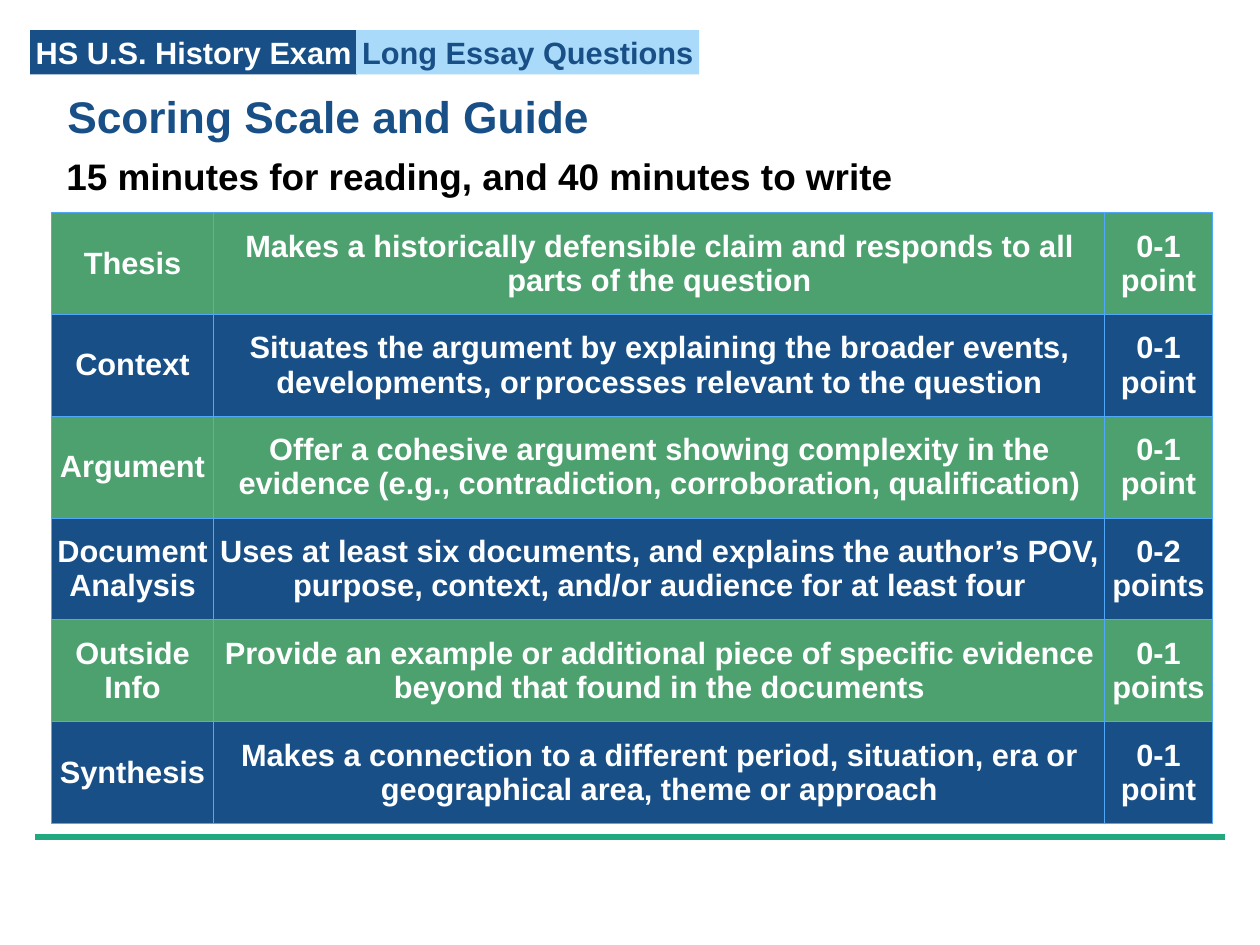
from dataclasses import dataclass

from lxml import etree
from pptx import Presentation
from pptx.dml.color import RGBColor
from pptx.enum.shapes import MSO_CONNECTOR, MSO_SHAPE
from pptx.enum.text import MSO_ANCHOR, PP_ALIGN
from pptx.oxml.ns import qn
from pptx.util import Inches, Pt

LEFT, CENTER = PP_ALIGN.LEFT, PP_ALIGN.CENTER
TOP, MIDDLE = MSO_ANCHOR.TOP, MSO_ANCHOR.MIDDLE
RECT, STRAIGHT = MSO_SHAPE.RECTANGLE, MSO_CONNECTOR.STRAIGHT


@dataclass(frozen=True)
class Theme:
    font: str = "Arial"
    navy: str = "174F86"
    sky: str = "AADAF9"
    green: str = "4CA16E"
    teal: str = "21A87E"
    edge: str = "51A8F9"
    white: str = "FFFFFF"
    black: str = "000000"
    title: int = 36
    lead: int = 30
    body: int = 25
    small: int = 12
    pad: float = 0.06


THEME = Theme()

# Text, left, width, fill, text colour
TAGS = [
    ("HS U.S. History Exam", 0.34, 3.69, THEME.navy, THEME.white),
    ("Long Essay Questions", 4.02, 3.87, THEME.sky, THEME.navy),
]
TITLE = "Scoring Scale and Guide"
LEAD = "15 minutes for reading, and 40 minutes to write"

# Criterion, runs of the rule with their sizes, score
GUIDE = [
    ("Thesis",
     [("Makes a historically defensible claim and responds to all parts of the question", THEME.body)],
     "0-1 point"),
    ("Context",
     [("Situates the argument by explaining the broader events, developments, or", THEME.body),
      (" ", THEME.small),
      ("processes relevant to the question", THEME.body)],
     "0-1 point"),
    ("Argument",
     [("Offer a cohesive argument showing complexity in the evidence "
       "(e.g., contradiction, corroboration, qualification)", THEME.body)],
     "0-1 point"),
    ("Document Analysis",
     [("Uses at least six documents, and explains the author’s POV, purpose, context, "
       "and/or audience for at least four", THEME.body)],
     "0-2 points"),
    ("Outside Info",
     [("Provide an example or additional piece of specific evidence beyond that found "
       "in the documents", THEME.body)],
     "0-1 points"),
    ("Synthesis",
     [("Makes a connection to a different period, situation, era or geographical area, "
       "theme or approach", THEME.body)],
     "0-1 point"),
]
COLS = [1.83, 10.06, 1.21]
ROW = 1.15


def paint(fill, color):
    fill.solid()
    fill.fore_color.rgb = RGBColor.from_string(color)


def pad(box):
    """Set equal margins on a text frame or a table cell."""
    box.margin_left = box.margin_right = Inches(THEME.pad)
    box.margin_top = box.margin_bottom = Inches(THEME.pad)


def write(frame, runs, color, align):
    para = frame.paragraphs[0]
    para.alignment = align
    for text, size in runs:
        run = para.add_run()
        run.text = text
        font = run.font
        font.name, font.size, font.bold = THEME.font, Pt(size), True
        font.color.rgb = RGBColor.from_string(color)
    return para


def label(shape, text, size, color, align=LEFT, anchor=MIDDLE, wrap=False):
    """Put one line of text in a shape or text box."""
    frame = shape.text_frame
    pad(frame)
    frame.word_wrap = wrap
    frame.vertical_anchor = anchor
    return write(frame, [(text, size)], color, align)


def frame_cell(cell):
    """Draw a thin border on all four sides of a cell."""
    props = cell._tc.get_or_add_tcPr()
    for spot, side in enumerate(("a:lnL", "a:lnR", "a:lnT", "a:lnB")):
        line = etree.Element(qn(side), w=str(Pt(1)))
        solid = etree.SubElement(line, qn("a:solidFill"))
        etree.SubElement(solid, qn("a:srgbClr"), val=THEME.edge)
        props.insert(spot, line)


def add_tags(slide):
    for text, left, width, fill, color in TAGS:
        tag = slide.shapes.add_shape(
            RECT, Inches(left), Inches(0.34), Inches(width), Inches(0.5))
        tag.shadow.inherit = False
        tag.line.fill.background()
        paint(tag.fill, fill)
        label(tag, text, THEME.body, color, CENTER)


def add_rule(slide):
    rule = slide.shapes.add_connector(
        STRAIGHT, Inches(0.4), Inches(9.45), Inches(13.83), Inches(9.45))
    rule.line.width = Pt(5)
    rule.line.color.rgb = RGBColor.from_string(THEME.teal)
    etree.SubElement(rule._element.spPr, qn("a:effectLst"))


def add_heads(slide):
    title = slide.shapes.add_textbox(Inches(0.7), Inches(0.97), Inches(6.02), Inches(0.68))
    label(title, TITLE, THEME.title, THEME.navy)
    lead = slide.shapes.add_textbox(Inches(0.69), Inches(1.67), Inches(12.84), Inches(0.57))
    para = label(lead, LEAD, THEME.lead, THEME.black, anchor=TOP, wrap=True)
    para.space_before = Pt(10)


def add_guide(slide):
    table = slide.shapes.add_table(
        len(GUIDE), len(COLS), Inches(0.58), Inches(2.4),
        Inches(sum(COLS)), Inches(ROW * len(GUIDE))).table
    table.first_row = table.horz_banding = False
    for col, width in zip(table.columns, COLS):
        col.width = Inches(width)
    for r, (name, rule, score) in enumerate(GUIDE):
        table.rows[r].height = Inches(ROW)
        parts = [[(name, THEME.body)], rule, [(score, THEME.body)]]
        for c, runs in enumerate(parts):
            cell = table.cell(r, c)
            pad(cell)
            cell.vertical_anchor = MIDDLE
            paint(cell.fill, THEME.navy if r % 2 else THEME.green)
            frame_cell(cell)
            write(cell.text_frame, runs, THEME.white, CENTER)


def main():
    deck = Presentation()
    deck.slide_width, deck.slide_height = Inches(14.22), Inches(10.67)
    slide = deck.slides.add_slide(deck.slide_layouts[6])
    paint(slide.background.fill, THEME.white)
    add_tags(slide)
    add_rule(slide)
    add_heads(slide)
    add_guide(slide)
    deck.save("out.pptx")


if __name__ == "__main__":
    main()
